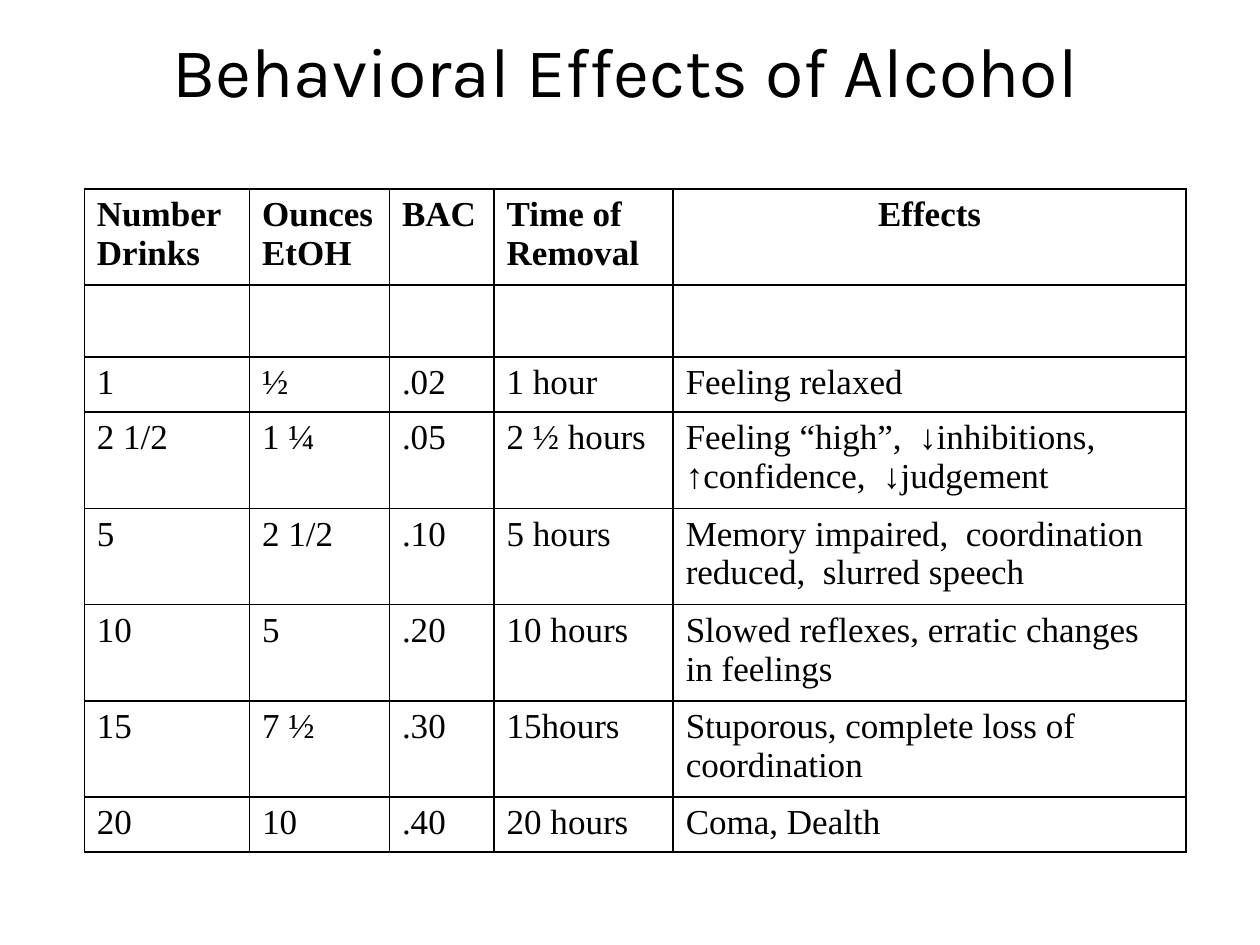
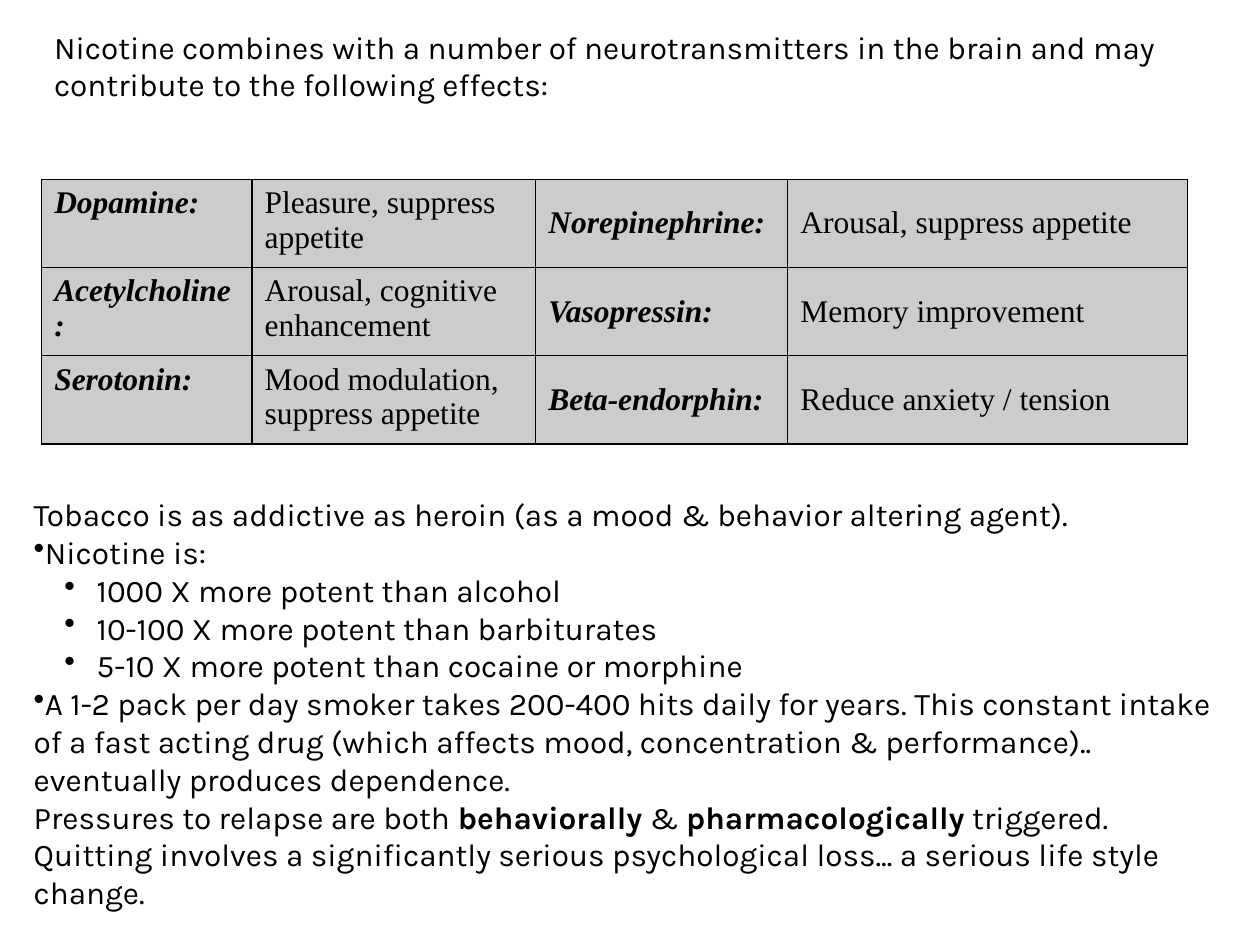
"""Build two slides on the effects of alcohol and nicotine."""
from lxml.etree import SubElement as Sub
from pptx import Presentation as Deck
from pptx.dml.color import RGBColor as Color
from pptx.enum.text import MSO_ANCHOR as Anchor, PP_ALIGN as Align
from pptx.oxml.ns import qn
from pptx.util import Cm, Pt

BLACK = Color(0, 0, 0)
GREY = Color(0xCC, 0xCC, 0xCC)
SANS, SERIF = "Karla", "Times New Roman"

TITLE = "Behavioral Effects of Alcohol"
DRINKS = [
    ("Number Drinks", "Ounces EtOH", "BAC", "Time of Removal", "Effects"),
    ("", "", "", "", ""),
    ("1", "½", ".02", "1 hour", "Feeling relaxed"),
    ("2 1/2", "1 ¼", ".05", "2 ½ hours",
     "Feeling “high”,  ↓inhibitions,  ↑confidence,  ↓judgement"),
    ("5", "2 1/2", ".10", "5 hours",
     "Memory impaired,  coordination reduced,  slurred speech"),
    ("10", "5", ".20", "10 hours", "Slowed reflexes, erratic changes in feelings"),
    ("15", "7 ½", ".30", "15hours", "Stuporous, complete loss of coordination"),
    ("20", "10", ".40", "20 hours", "Coma, Dealth"),
]
DRINK_COLS = (3.33, 2.82, 2.11, 3.61, 10.34)
TALL, GAP, LOW = 1.94, 1.45, 1.11
DRINK_ROWS = (TALL, GAP, LOW, TALL, TALL, TALL, TALL, LOW)

INTRO = ("Nicotine combines with a number of neurotransmitters in the brain "
         "and may contribute to the following effects:")
BRAIN = [
    ("Dopamine:", "Pleasure, suppress appetite",
     "Norepinephrine:", "Arousal, suppress appetite"),
    ("Acetylcholine:", "Arousal, cognitive enhancement",
     "Vasopressin:", "Memory improvement"),
    ("Serotonin:", "Mood modulation, suppress appetite",
     "Beta-endorphin:", "Reduce anxiety / tension"),
]
BRAIN_COLS = (4.24, 5.72, 5.08, 8.05)
BRAIN_ROWS = (1.78,) * len(BRAIN)

PLAIN, DOT, SUB = None, (0, 0), (1.27, -0.65)
FACTS = [
    (PLAIN, "Tobacco is as addictive as heroin (as a mood & behavior altering agent)."),
    (DOT, "Nicotine is:"),
    (SUB, "1000 X more potent than alcohol"),
    (SUB, "10-100 X more potent than barbiturates"),
    (SUB, "5-10 X more potent than cocaine or morphine"),
    (DOT, "A 1-2 pack per day smoker takes 200-400 hits daily for years. "
          "This constant intake of a fast acting drug (which affects mood, "
          "concentration & performance).. eventually produces dependence.\n"
          "Pressures to relapse are both **behaviorally** & "
          "**pharmacologically** triggered."),
    (PLAIN, "Quitting involves a significantly serious psychological loss... "
            "a serious life style change."),
]


def style(para, face, size, bold=False, slant=False):
    """Format every run of a paragraph."""
    for run in para.runs:
        font = run.font
        font.name, font.size = face, Pt(size)
        font.bold, font.italic = bold, slant
        font.color.rgb = BLACK


def bullet(para, left, hang):
    """Give a paragraph a round bullet."""
    props = para._p.get_or_add_pPr()
    props.set("marL", str(Cm(left)))
    props.set("indent", str(Cm(hang)))
    Sub(props, qn("a:buChar"), char="•")


def add_text(slide, spot, lines, size, anchor=Anchor.MIDDLE, align=Align.LEFT):
    """Add a text box; ** marks bold words."""
    frame = slide.shapes.add_textbox(*map(Cm, spot)).text_frame
    frame.word_wrap, frame.vertical_anchor = True, anchor
    for num, (mark, text) in enumerate(lines):
        para = frame.add_paragraph() if num else frame.paragraphs[0]
        para.alignment = align
        para.text, *rest = text.split("**")
        style(para, SANS, size)
        for odd, part in enumerate(rest, 1):
            run = para.add_run()
            run.text = part
        if rest:
            style(para, SANS, size)
            for run in para.runs[-len(rest)::2]:
                run.font.bold = True
        if mark:
            bullet(para, *mark)


def border(cell, width):
    """Draw all four sides of a cell."""
    props = cell._tc.get_or_add_tcPr()
    for side in "LRTB":
        line = Sub(props, qn(f"a:ln{side}"), w=str(Pt(width)))
        Sub(Sub(line, qn("a:solidFill")), qn("a:srgbClr"), val=str(BLACK))


def add_grid(slide, left, top, data, cols, rows, size, width, look):
    """Add a table; look(cell, row, col) returns bold and slant."""
    spot = map(Cm, (left, top, sum(cols), sum(rows)))
    table = slide.shapes.add_table(len(rows), len(cols), *spot).table
    table.first_row = table.horz_banding = False
    for col, wide in zip(table.columns, cols):
        col.width = Cm(wide)
    for row, high in zip(table.rows, rows):
        row.height = Cm(high)
    for y, texts in enumerate(data):
        for x, text in enumerate(texts):
            cell = table.cell(y, x)
            border(cell, width)
            cell.text_frame.text = text
            style(cell.text_frame.paragraphs[0], SERIF, size, *look(cell, y, x))


def drink_look(cell, row, col):
    """Bold the head row and centre its last cell."""
    cell.fill.background()
    if row == 0 and col == len(DRINK_COLS) - 1:
        cell.text_frame.paragraphs[0].alignment = Align.CENTER
    return row == 0, False


def brain_look(cell, row, col):
    """Shade the cell and stress the name columns."""
    cell.fill.solid()
    cell.fill.fore_color.rgb = GREY
    if col > 1:
        cell.vertical_anchor = Anchor.MIDDLE
    name = col % 2 == 0
    return name, name


def main():
    """Make and save the deck."""
    deck = Deck()
    deck.slide_width, deck.slide_height = Cm(25.4), Cm(19.05)
    first, second = (deck.slides.add_slide(deck.slide_layouts[6]) for _ in range(2))

    add_grid(first, 1.7, 3.81, DRINKS, DRINK_COLS, DRINK_ROWS, 20, 1, drink_look)
    add_text(first, (1.7, 0.43, 21.8, 3.63), [(PLAIN, TITLE)], 40,
             Anchor.TOP, Align.CENTER)

    add_text(second, (0.84, 0.43, 24.56, 1.78), [(PLAIN, INTRO)], 18)
    add_grid(second, 0.84, 3.61, BRAIN, BRAIN_COLS, BRAIN_ROWS, 18, 0.75, brain_look)
    add_text(second, (0.43, 10.24, 24.56, 7.87), FACTS, 18)
    deck.save("out.pptx")


if __name__ == "__main__":
    main()
